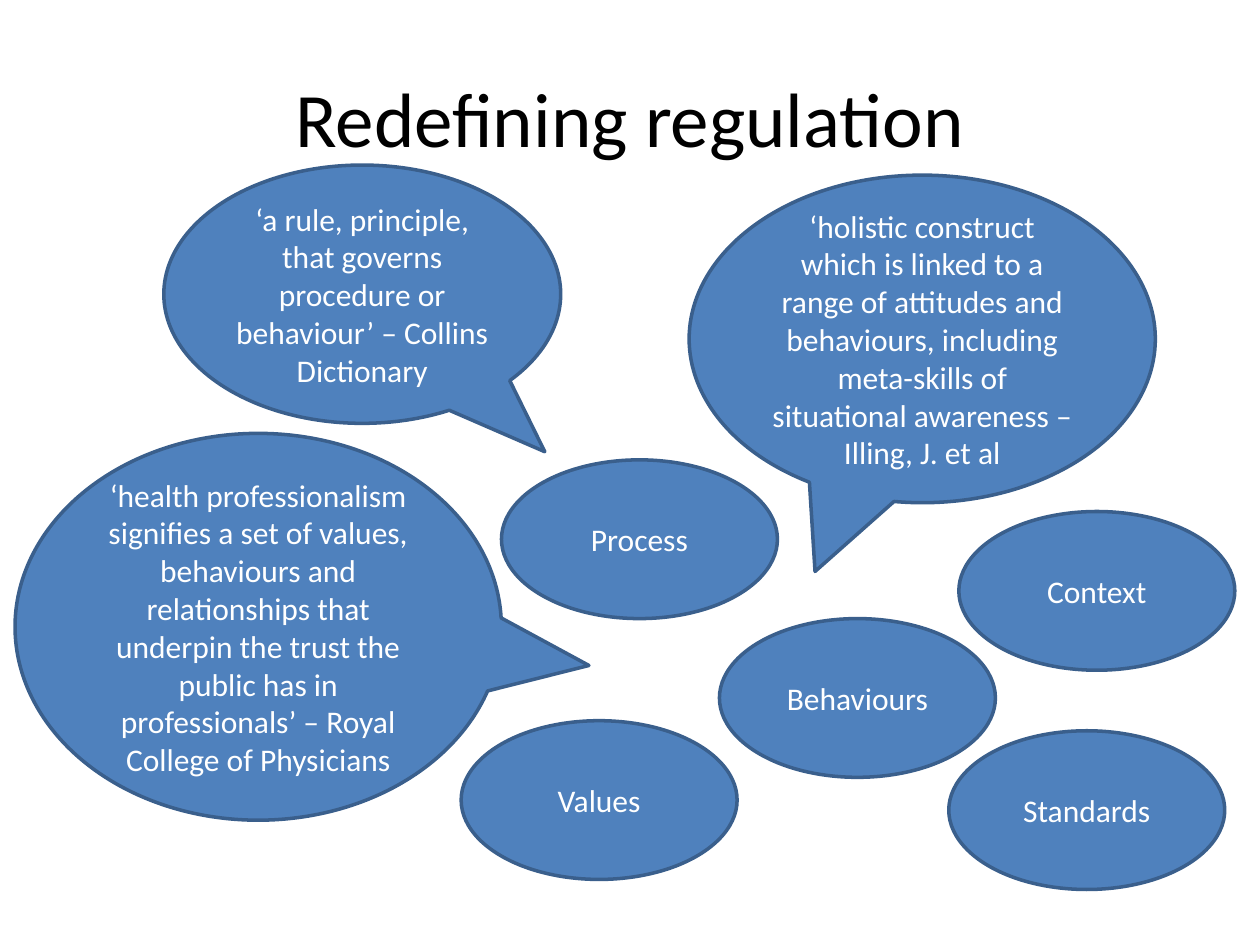
from dataclasses import dataclass

from pptx import Presentation
from pptx.dml.color import RGBColor
from pptx.enum.shapes import MSO_SHAPE as SHAPE
from pptx.enum.text import MSO_ANCHOR as ANCHOR, PP_ALIGN as ALIGN
from pptx.util import Inches, Pt


@dataclass(frozen=True)
class Theme:
    font: str = "Calibri"
    title_size: int = 44
    body_size: int = 18
    line_width: int = 2
    title: RGBColor = RGBColor(0x00, 0x00, 0x00)
    text: RGBColor = RGBColor(0xFF, 0xFF, 0xFF)
    fill: RGBColor = RGBColor(0x4F, 0x81, 0xBD)
    line: RGBColor = RGBColor(0x3A, 0x5F, 0x8C)


THEME = Theme()
CONCEPT_SIZE = (2.19, 1.26)

# Quotation, box (left, top, width, height), pointer offset from the centre
QUOTES = [
    ("‘health professionalism signifies a set of values, behaviours and "
     "relationships that underpin the trust the public has in "
     "professionals’ – Royal College of Physicians",
     (0.12, 3.44, 3.86, 3.07), (0.68, 0.1)),
    ("‘a rule, principle, that governs procedure or behaviour’ – "
     "Collins Dictionary",
     (1.3, 1.31, 3.15, 2.05), (0.46, 0.61)),
    ("‘holistic construct which is linked to a range of attitudes and "
     "behaviours, including meta-skills of situational awareness – "
     "Illing, J. et al",
     (5.47, 1.39, 3.7, 2.6), (-0.23, 0.71)),
]

# Concept, left, top
CONCEPTS = [
    ("Values", 3.66, 5.72),
    ("Behaviours", 5.71, 4.91),
    ("Context", 7.61, 4.06),
    ("Standards", 7.53, 5.8),
    ("Process", 3.98, 3.65),
]


def set_text(sp, text, size, color):
    tf = sp.text_frame
    tf.word_wrap = True
    tf.vertical_anchor = ANCHOR.MIDDLE
    p = tf.paragraphs[0]
    p.text = text
    p.alignment = ALIGN.CENTER
    p.font.name = THEME.font
    p.font.size = Pt(size)
    p.font.color.rgb = color


def add_title(s, text, box):
    sp = s.shapes.add_textbox(*map(Inches, box))
    set_text(sp, text, THEME.title_size, THEME.title)


def add_bubble(s, kind, text, box):
    sp = s.shapes.add_shape(kind, *map(Inches, box))
    sp.shadow.inherit = False
    sp.fill.solid()
    sp.fill.fore_color.rgb = THEME.fill
    sp.line.color.rgb = THEME.line
    sp.line.width = Pt(THEME.line_width)
    set_text(sp, text, THEME.body_size, THEME.text)
    return sp


def add_quote(s, text, box, pointer):
    sp = add_bubble(s, SHAPE.OVAL_CALLOUT, text, box)
    for i, offset in enumerate(pointer):
        sp.adjustments[i] = offset


def add_concept(s, text, left, top):
    add_bubble(s, SHAPE.OVAL, text, (left, top, *CONCEPT_SIZE))


def main():
    prs = Presentation()
    prs.slide_width, prs.slide_height = Inches(10), Inches(7.5)
    s = prs.slides.add_slide(prs.slide_layouts[6])

    # Heading
    add_title(s, "Redefining regulation", (0.5, 0.3, 9, 1.25))

    # Quoted definitions
    for quote in QUOTES:
        add_quote(s, *quote)

    # Concepts they point to
    for concept in CONCEPTS:
        add_concept(s, *concept)

    prs.save("out.pptx")


if __name__ == "__main__":
    main()
